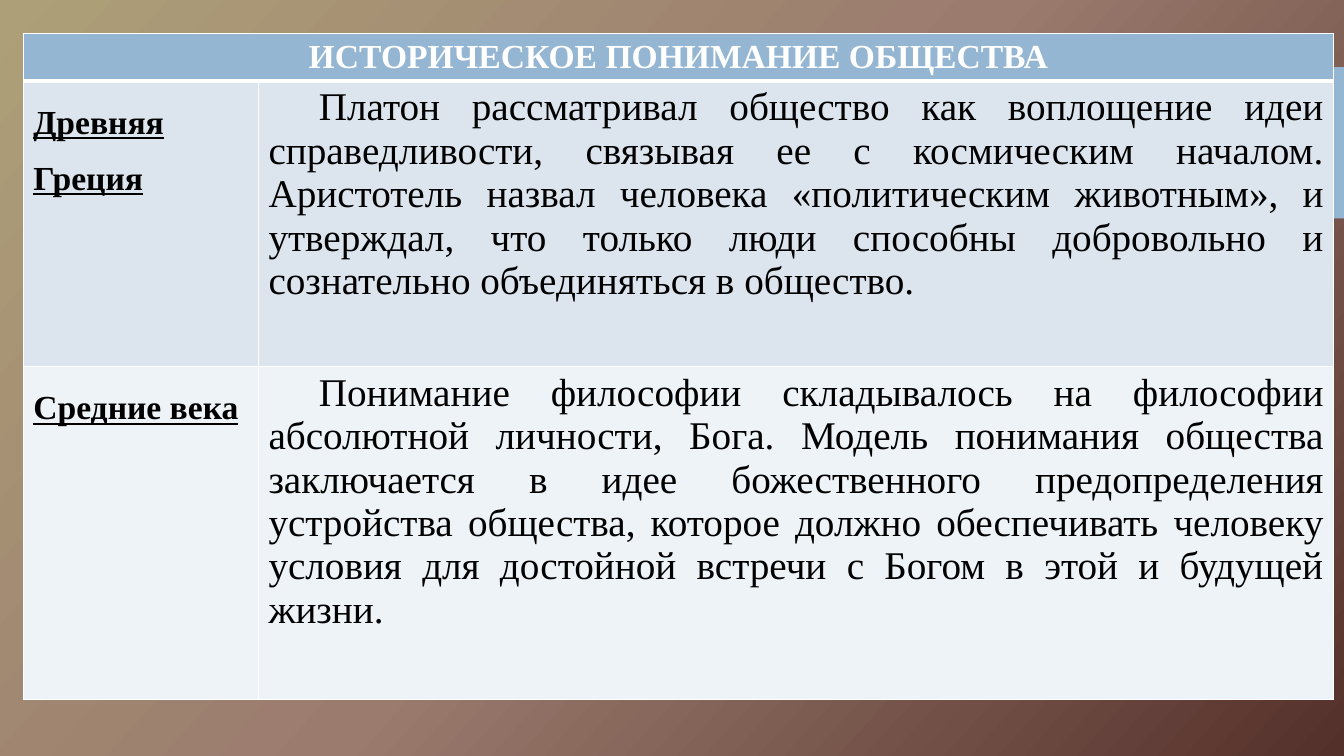
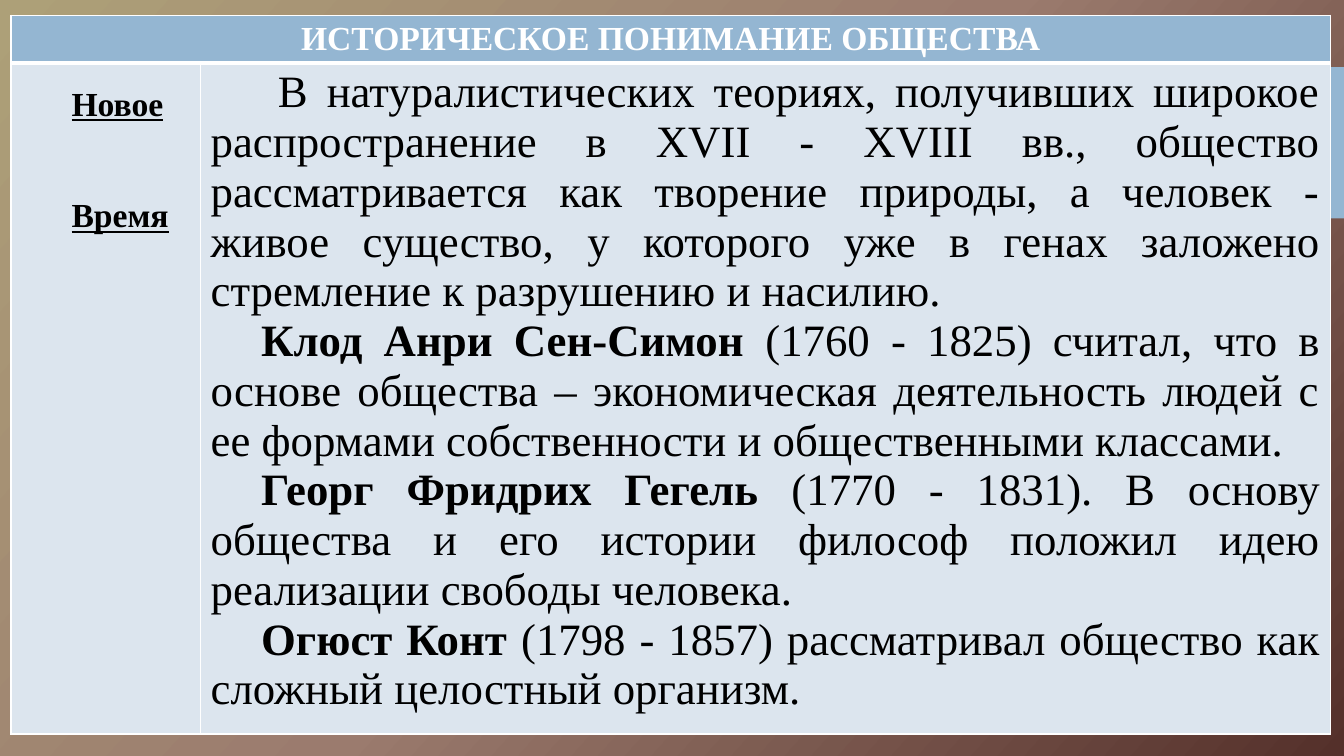
"""Two table slides on how society was understood through history."""
import copy
import pptx
import pptx.dml.color
import pptx.enum.shapes
import pptx.enum.text
import pptx.util
from lxml import etree

Pt = pptx.util.Pt
Align = pptx.enum.text.PP_ALIGN


class Theme:
    font = "Times New Roman"
    white, black = "FFFFFF", "000000"
    blue, light, pale = "94B6D2", "DCE5EE", "EEF3F7"
    stops = [(0, "ADA078"), (0.5, "9B7B6E"), (1, "54302A")]
    small, body, large = 24, 28, 32
    indent = 36
    thin, thick = 1, 3


def color(code):
    return pptx.dml.color.RGBColor.from_string(code)


def fill_cell(cell, fill, paras, edges, **style):
    cell.fill.solid()
    cell.fill.fore_color.rgb = color(fill)
    props = cell._tc.get_or_add_tcPr()
    for spot, (side, width) in enumerate(zip("LRTB", edges)):
        line = etree.fromstring(
            '<a:ln%s xmlns:a="http://schemas.openxmlformats.org/drawingml/2006/main" w="%d">'
            '<a:solidFill><a:srgbClr val="%s"/></a:solidFill></a:ln%s>'
            % (side, Pt(width), Theme.white, side))
        props.insert(spot, line)
    frame = cell.text_frame
    for num, (indent, lead, text) in enumerate(paras):
        para = frame.add_paragraph() if num else frame.paragraphs[0]
        para.alignment = style.get("align", Align.JUSTIFY)
        para.line_spacing = style.get("space", 1.0)
        if num < len(paras) - 1:
            para.space_after = Pt(style.get("after", 0))
        para._p.get_or_add_pPr().set("indent", str(Pt(indent)))
        font = para.font
        font.name, font.size = Theme.font, Pt(style["size"])
        font.bold = style.get("bold", False)
        font.underline = style.get("under", False)
        font.color.rgb = color(style.get("ink", Theme.black))
        if lead:
            run = para.add_run()
            run.text = lead
            run.font.bold = True
        para.add_run().text = text


tab = Theme.indent
title = "ИСТОРИЧЕСКОЕ ПОНИМАНИЕ ОБЩЕСТВА"
pages = [
    dict(at=(16.6, 24), cols=(168, 768), rows=(31, 204, 238), size=Theme.body, body=[
        ([(0, "", "Древняя Греция")],
         [(tab, "", "Платон рассматривал общество как воплощение идеи справедливости, "
           "связывая ее с космическим началом. Аристотель назвал человека "
           "«политическим животным», и утверждал, что только люди способны "
           "добровольно и сознательно объединяться в общество.")]),
        ([(0, "", "Средние века")],
         [(tab, "", "Понимание философии складывалось на философии абсолютной личности, "
           "Бога. Модель понимания общества заключается в идее божественного "
           "предопределения устройства общества, которое должно обеспечивать человеку "
           "условия для достойной встречи с Богом в этой и будущей жизни.")]),
    ]),
    dict(at=(7.9, 10.8), cols=(135.4, 807), rows=(34, 479.5), size=Theme.large, body=[
        ([(tab, "", "Новое"), (tab, "", "Время")],
         [(tab + 12, "", "В натуралистических теориях, получивших широкое распространение "
           "в XVII - XVIII вв., общество рассматривается как творение природы, а человек - "
           "живое существо, у которого уже в генах заложено стремление к разрушению "
           "и насилию."),
          (tab, "Клод Анри Сен-Симон ", "(1760 - 1825) считал, что в основе общества – "
           "экономическая деятельность людей с ее формами собственности и "
           "общественными классами."),
          (tab, "Георг Фридрих Гегель ", "(1770 - 1831). В основу общества и его истории "
           "философ положил идею реализации свободы человека."),
          (tab, "Огюст Конт ", "(1798 - 1857) рассматривал общество как сложный "
           "целостный организм.")]),
    ]),
]

deck = pptx.Presentation()
deck.slide_width, deck.slide_height = Pt(960), Pt(540)

back = deck.slide_master.background.fill
back.gradient()
back.gradient_angle = 318
first = back.gradient_stops[0]._gs
first.addnext(copy.deepcopy(first))
for stop, (spot, code) in zip(back.gradient_stops, Theme.stops):
    stop.position = spot
    stop.color.rgb = color(code)

for page in pages:
    slide = deck.slides.add_slide(deck.slide_layouts[6])
    band = slide.shapes.add_shape(
        pptx.enum.shapes.MSO_SHAPE.RECTANGLE, Pt(834), Pt(48), Pt(126), Pt(108))
    band.shadow.inherit = False
    band.fill.solid()
    band.fill.fore_color.rgb = color(Theme.blue)
    band.line.fill.background()

    cols, rows = page["cols"], page["rows"]
    left, top = page["at"]
    table = slide.shapes.add_table(
        len(rows), len(cols), Pt(left), Pt(top), Pt(sum(cols)), Pt(sum(rows))).table
    table.horz_banding = False
    for col, width in zip(table.columns, cols):
        col.width = Pt(width)
    for row, height in zip(table.rows, rows):
        row.height = Pt(height)

    thin, thick = Theme.thin, Theme.thick
    table.cell(0, 0).merge(table.cell(0, 1))
    fill_cell(table.cell(0, 0), Theme.blue, [(0, "", title)], (thin, thin, thin, thick),
              size=Theme.small, bold=True, ink=Theme.white, align=Align.CENTER)
    for num, (label, text) in enumerate(page["body"], 1):
        shade = Theme.light if num % 2 else Theme.pale
        edges = (thin, thin, thick if num == 1 else thin, thin)
        fill_cell(table.cell(num, 0), shade, label, edges, size=Theme.small,
                  bold=True, under=True, space=1.5, after=40)
        fill_cell(table.cell(num, 1), shade, text, edges, size=page["size"])

deck.save("out.pptx")
